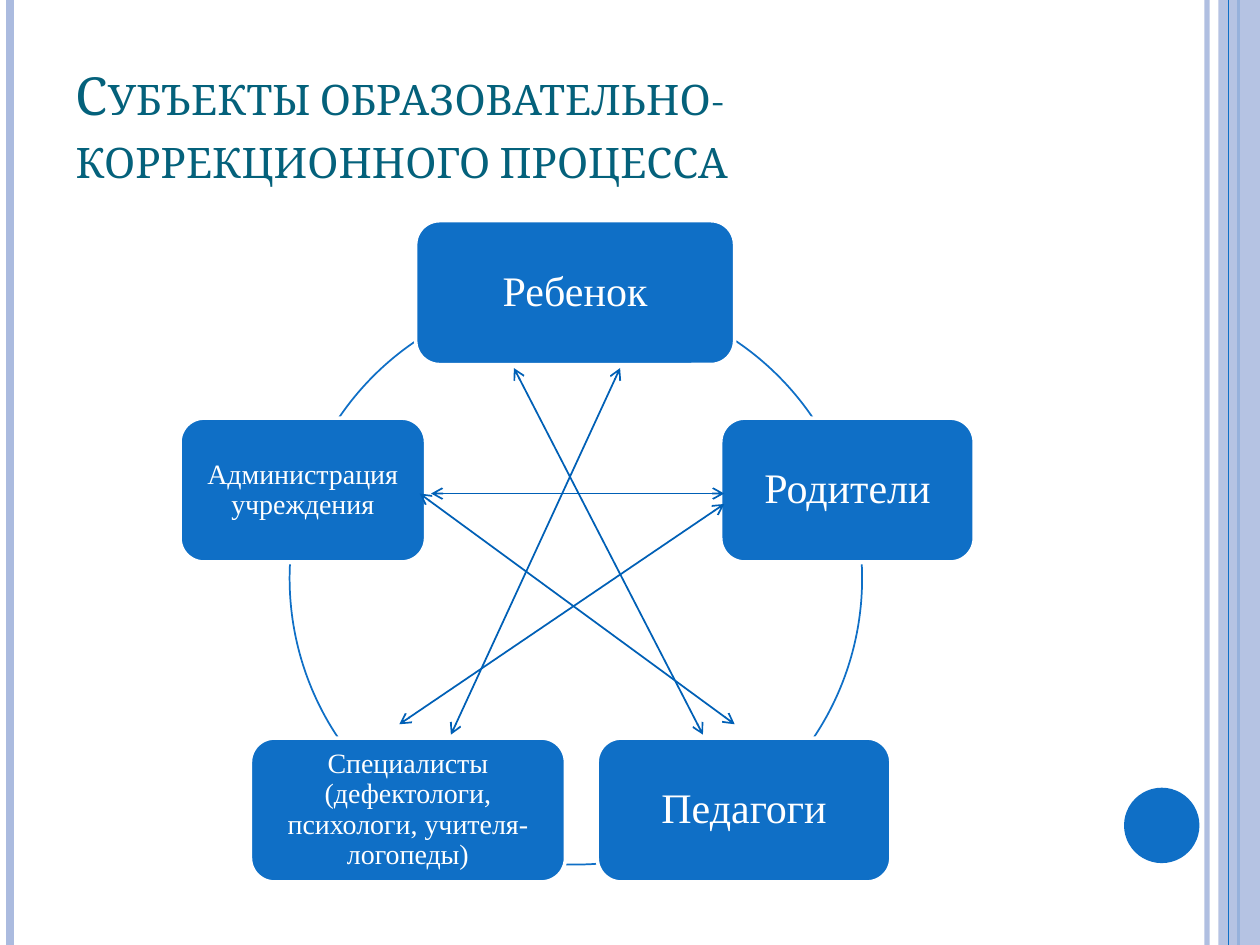
import pptx
import pptx.util
import pptx.dml.color
import pptx.enum.shapes
import pptx.enum.text
import pptx.oxml
import pptx.oxml.ns
from pptx.util import Cm

COLORS = {
    "accent": "0F6FC6",
    "arrow": "0060B6",
    "rail": "ABBBDF",
    "title": "04617B",
    "white": "FFFFFF",
}
SHAPE = pptx.enum.shapes.MSO_SHAPE
NODE_HEIGHT = 2.9

RAILS = [(24.33, "rail", 3, 93), (0.2, "rail", 4.5, 100), (24.97, "accent", 1.5, 100)]
SUBJECTS = [
    ("Ребенок", 8.38, 4.45, 6.43, 24),
    ("Родители", 14.53, 8.43, 5.11, 24),
    ("Педагоги", 12.04, 14.88, 5.92, 24),
    ("Специалисты (дефектологи, психологи, учителя-логопеды)", 5.05, 14.88, 6.35, 16),
    ("Администрация учреждения", 3.63, 8.43, 4.95, 16),
]
RING_ARCS = [(304, 326), (357.2, 33.7), (85.7, 92.3), (146.3, 182.8), (214, 236)]
RELATIONS = [
    (10.36, 7.42, 14.17, 14.81),
    (12.5, 7.42, 9.09, 14.81),
    (8.69, 9.95, 14.6, 9.95),
    (8.46, 9.95, 14.81, 14.6),
    (14.6, 10.16, 8.05, 14.6),
]


def rgb(name):
    """Return the named palette colour."""
    return pptx.dml.color.RGBColor.from_string(COLORS[name])


def set_opacity(properties, percent):
    """Make the solid colour found inside the properties partly transparent."""
    color = properties.find(".//" + pptx.oxml.ns.qn("a:srgbClr"))
    alpha = pptx.oxml.parse_xml(f'<a:alpha {pptx.oxml.ns.nsdecls("a")} val="{percent * 1000}"/>')
    color.append(alpha)


def add_line(slide, start_x, start_y, end_x, end_y, color, width):
    """Add a straight line without a shadow."""
    line = slide.shapes.add_connector(
        pptx.enum.shapes.MSO_CONNECTOR.STRAIGHT,
        Cm(start_x), Cm(start_y), Cm(end_x), Cm(end_y))
    line.line.color.rgb = rgb(color)
    line.line.width = pptx.util.Pt(width)
    line._element.spPr.append(
        pptx.oxml.parse_xml(f'<a:effectLst {pptx.oxml.ns.nsdecls("a")}/>'))
    return line


def add_rail(slide, x, color, width, opacity=100):
    """Add a full-height decorative line."""
    rail = add_line(slide, x, 0, x, 19.05, color, width)
    if opacity < 100:
        set_opacity(rail.line._get_or_add_ln(), opacity)


def add_relation(slide, start_x, start_y, end_x, end_y):
    """Add a two-way arrow between subjects."""
    relation = add_line(slide, start_x, start_y, end_x, end_y, "arrow", 1)
    outline = relation.line._get_or_add_ln()
    for end in ("headEnd", "tailEnd"):
        outline.append(pptx.oxml.parse_xml(
            f'<a:{end} {pptx.oxml.ns.nsdecls("a")} type="arrow"/>'))


def add_filled(slide, preset, left, top, width, height, color):
    """Add a plain filled shape without outline or shadow."""
    filled = slide.shapes.add_shape(preset, Cm(left), Cm(top), Cm(width), Cm(height))
    filled.shadow.inherit = False
    filled.fill.solid()
    filled.fill.fore_color.rgb = rgb(color)
    filled.line.fill.background()
    return filled


def add_ring_arc(slide, start, end):
    """Add one piece of the ring, with angles clockwise from the right."""
    arc = slide.shapes.add_shape(SHAPE.ARC, Cm(5.84), Cm(5.89), Cm(11.54), Cm(11.54))
    arc.shadow.inherit = False
    arc.adjustments[0] = start * 0.6
    arc.adjustments[1] = end * 0.6
    arc.fill.background()
    arc.line.color.rgb = rgb("accent")
    arc.line.width = pptx.util.Pt(1)


def add_subject(slide, label, left, top, width, size):
    """Add a rounded box naming a subject."""
    subject = add_filled(slide, SHAPE.ROUNDED_RECTANGLE, left, top, width, NODE_HEIGHT, "accent")
    subject.line.color.rgb = rgb("white")
    subject.line.width = pptx.util.Pt(2)
    frame = subject.text_frame
    frame.word_wrap = True
    frame.vertical_anchor = pptx.enum.text.MSO_ANCHOR.MIDDLE
    inset = Cm(0.39 if size > 20 else 0.29)
    frame.margin_left = frame.margin_right = inset
    frame.margin_top = frame.margin_bottom = Cm(0.18)
    frame.text = label
    paragraph = frame.paragraphs[0]
    paragraph.alignment = pptx.enum.text.PP_ALIGN.CENTER
    paragraph.line_spacing = 0.9
    paragraph.font.name = "Times New Roman"
    paragraph.font.size = pptx.util.Pt(size)
    paragraph.font.color.rgb = rgb("white")


def set_title(slide, wording):
    """Place and format the title in small capitals."""
    title = slide.shapes.title
    title.left, title.top, title.width, title.height = Cm(1.27), Cm(0.76), Cm(20.75), Cm(3.18)
    frame = title.text_frame
    frame.vertical_anchor = pptx.enum.text.MSO_ANCHOR.BOTTOM
    frame.text = wording
    paragraph = frame.paragraphs[0]
    paragraph.alignment = pptx.enum.text.PP_ALIGN.LEFT
    paragraph.font.name = "Cambria"
    paragraph.font.size = pptx.util.Pt(30)
    paragraph.font.color.rgb = rgb("title")
    paragraph.font._element.set("cap", "small")


def main():
    """Build the slide and save it."""
    deck = pptx.Presentation()
    deck.slide_width, deck.slide_height = Cm(25.4), Cm(19.05)
    slide = deck.slides.add_slide(deck.slide_layouts[5])
    for rail in RAILS:
        add_rail(slide, *rail)
    band = add_filled(slide, SHAPE.RECTANGLE, 24.56, 0, 0.84, 19.05, "rail")
    set_opacity(band._element.spPr, 87)
    add_rail(slide, 24.77, "accent", 0.75)
    add_filled(slide, SHAPE.OVAL, 22.66, 15.88, 1.52, 1.52, "accent")
    set_title(slide, "Субъекты образовательно-коррекционного процесса")
    for arc in RING_ARCS:
        add_ring_arc(slide, *arc)
    for subject in SUBJECTS:
        add_subject(slide, *subject)
    for relation in RELATIONS:
        add_relation(slide, *relation)
    deck.save("out.pptx")


if __name__ == "__main__":
    main()
